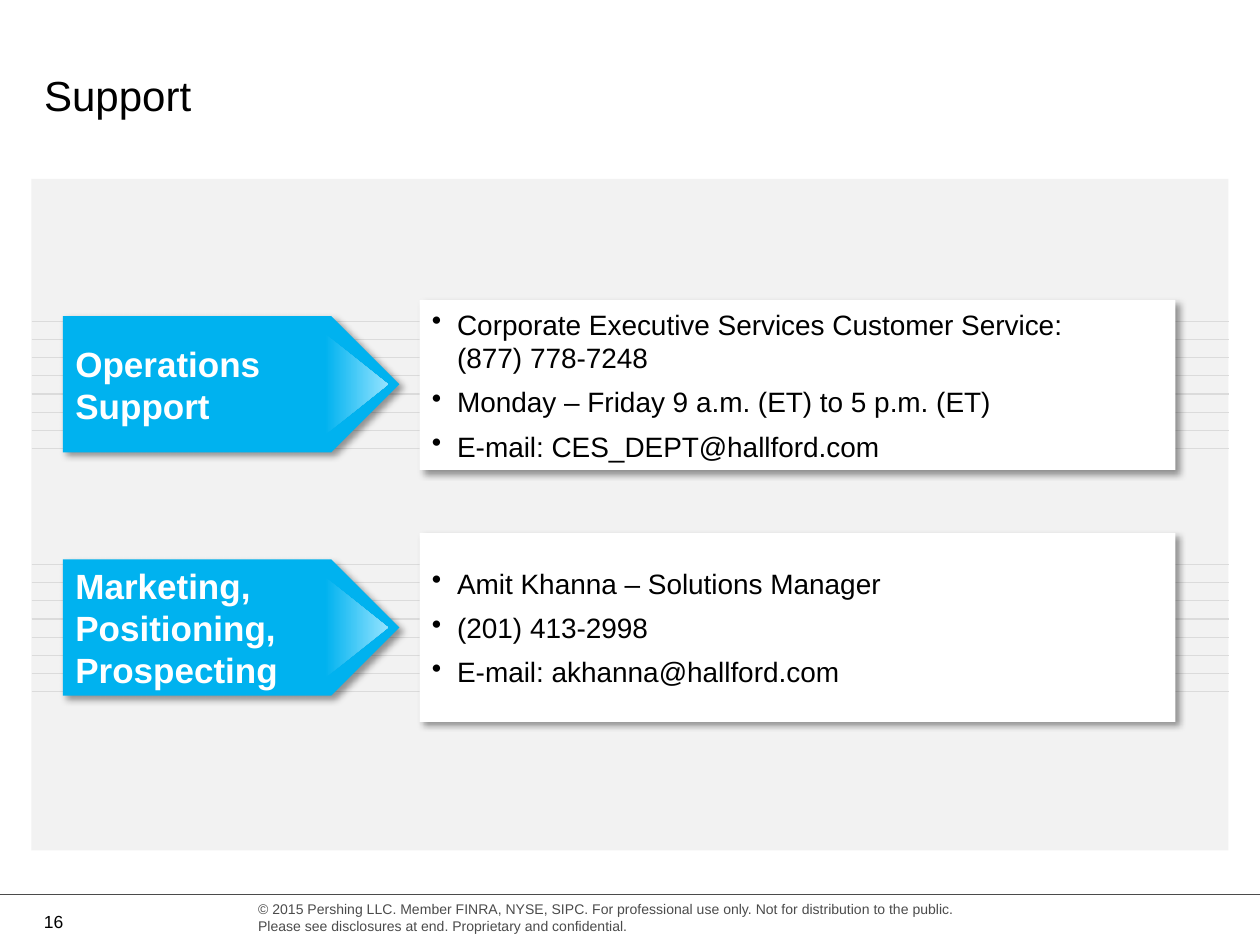
"""Build the Support slide with two labelled contact rows."""
from lxml import etree
from pptx import Presentation
from pptx import util as u
from pptx.dml.color import RGBColor
from pptx.enum import shapes, text
from pptx.oxml import ns

Inches, Pt = u.Inches, u.Pt
color = RGBColor.from_string
SHADOW = {"blurRad": str(Pt(4)), "dist": str(Pt(3)), "dir": "2700000", "algn": "tl", "rotWithShape": "0"}


def add_element(parent, tag, **attributes):
    return etree.SubElement(parent, ns.qn(tag), attributes)


def write(box, paragraphs, size, ink, bold=False, bullets=False, anchor=text.MSO_ANCHOR.MIDDLE):
    frame = box.text_frame
    frame.word_wrap = True
    frame.auto_size = text.MSO_AUTO_SIZE.NONE
    frame.vertical_anchor = anchor
    for index, lines in enumerate(paragraphs):
        para = frame.paragraphs[0] if index == 0 else frame.add_paragraph()
        para.alignment = text.PP_ALIGN.LEFT
        if bullets:
            properties = para._p.get_or_add_pPr()
            properties.set("marL", str(Inches(0.2)))
            properties.set("indent", str(Inches(-0.2)))
            add_element(add_element(properties, "a:buClr"), "a:srgbClr", val="000000")
            add_element(properties, "a:buChar", char="•")
            para.space_before = Pt(6 if index else 0)
        for number, line in enumerate(lines.split("\n")):
            if number:
                para.add_line_break()
            span = para.add_run()
            span.text = line
            span.font.name = "Arial"
            span.font.size = Pt(size)
            span.font.bold = bold
            span.font.color.rgb = color(ink)


deck = Presentation()
deck.slide_width, deck.slide_height = Inches(10), Inches(7.5)
page = deck.slides.add_slide(deck.slide_layouts[5])

title = page.shapes.title
title.left, title.top, title.width, title.height = Inches(0.25), Inches(0.5), Inches(9.5), Inches(0.46)
write(title, ["Support"], 24, "000000", anchor=text.MSO_ANCHOR.TOP)

number_box = page.shapes.add_textbox(Inches(0.25), Inches(7.12), Inches(0.45), Inches(0.38))
write(number_box, ["16"], 10, "000000")
footer = page.shapes.add_textbox(Inches(1.95), Inches(7.1), Inches(6.59), Inches(0.37))
write(footer, [
    "© 2015 Pershing LLC. Member FINRA, NYSE, SIPC. For professional use only. Not for distribution to the public.\n"
    "Please see disclosures at end. Proprietary and confidential."
], 8, "4B4B4B", anchor=text.MSO_ANCHOR.TOP)

panel = page.shapes.add_shape(shapes.MSO_SHAPE.RECTANGLE, Inches(0.25), Inches(1.42), Inches(9.5), Inches(5.33))
panel.shadow.inherit = False
panel.fill.solid()
panel.fill.fore_color.rgb = color("F2F2F2")
panel.line.fill.background()

rules = [(0, 10, 7.1, "4B4B4B", 1)]
for start in (2.55, 4.48):
    rules += [(0.25, 9.75, start + step * 1.01 / 7, "DBDBDB", 0.75) for step in range(8)]
for left, right, y, ink, weight in rules:
    rule = page.shapes.add_connector(shapes.MSO_CONNECTOR.STRAIGHT, Inches(left), Inches(y), Inches(right), Inches(y))
    rule.line.color.rgb = color(ink)
    rule.line.width = Pt(weight)
    add_element(rule._element.spPr, "a:effectLst")

rows = [
    (2.51, "Operations\nSupport", 2.38, 1.35, [
        "Corporate Executive Services Customer Service:\n(877) 778-7248",
        "Monday – Friday 9 a.m. (ET) to 5 p.m. (ET)",
        "E-mail: CES_DEPT@hallford.com",
    ]),
    (4.44, "Marketing,\nPositioning,\nProspecting", 4.23, 1.5, [
        "Amit Khanna – Solutions Manager",
        "(201) 413-2998",
        "E-mail: akhanna@hallford.com",
    ]),
]
for arrow_top, label, card_top, card_height, details in rows:
    arrow = page.shapes.add_shape(
        shapes.MSO_SHAPE.PENTAGON, Inches(0.5), Inches(arrow_top), Inches(2.67), Inches(1.08))
    card = page.shapes.add_shape(
        shapes.MSO_SHAPE.RECTANGLE, Inches(3.33), Inches(card_top), Inches(6), Inches(card_height))
    for box, fill in ((arrow, "00B2EF"), (card, "FFFFFF")):
        box.fill.solid()
        box.fill.fore_color.rgb = color(fill)
        box.line.fill.background()
        box.shadow.inherit = False
        effects = box._element.spPr.find(ns.qn("a:effectLst"))
        shade = add_element(add_element(effects, "a:outerShdw", **SHADOW), "a:srgbClr", val="000000")
        add_element(shade, "a:alpha", val="40000")
    write(arrow, [label], 20, "FFFFFF", bold=True)
    write(card, details, 16, "000000", bullets=True)

    glow = page.shapes.add_shape(
        shapes.MSO_SHAPE.PENTAGON, Inches(2.58), Inches(arrow_top + 0.14), Inches(0.5), Inches(0.8))
    glow.adjustments[0] = 1
    glow.shadow.inherit = False
    glow.line.fill.background()
    glow.fill.gradient()
    glow.fill.gradient_angle = 0
    for stop, position, ink in zip(glow.fill.gradient_stops, (0, 1), ("00B2EF", "93E3FF")):
        stop.position = position
        stop.color.rgb = color(ink)

deck.save("out.pptx")
